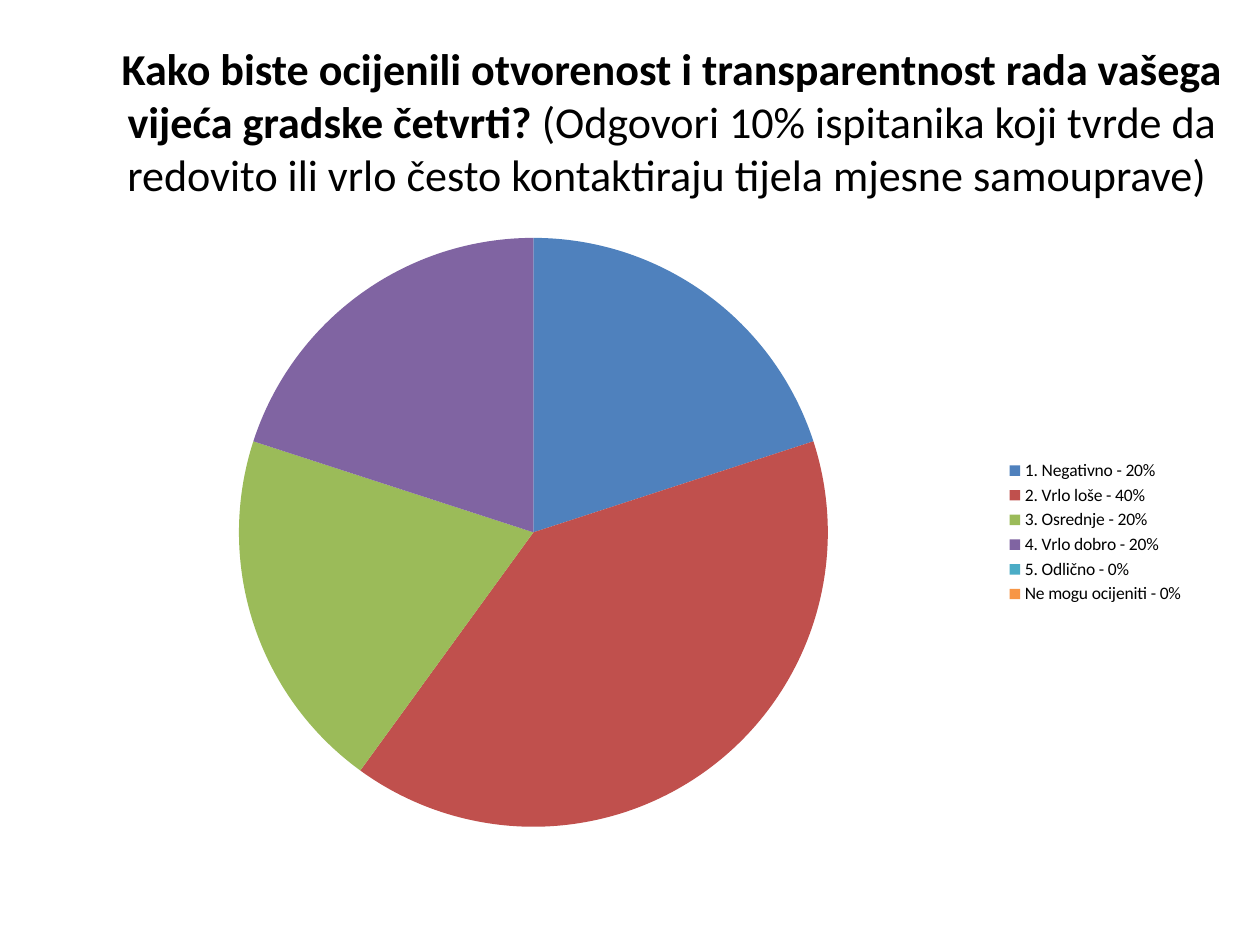
from pptx import Presentation
from pptx.chart.data import CategoryChartData
from pptx.dml.color import RGBColor
from pptx.enum.chart import XL_CHART_TYPE, XL_LEGEND_POSITION
from pptx.enum.text import MSO_ANCHOR, PP_ALIGN
from pptx.util import Pt

PIE = XL_CHART_TYPE.PIE
RIGHT = XL_LEGEND_POSITION.RIGHT
MIDDLE = MSO_ANCHOR.MIDDLE
CENTER = PP_ALIGN.CENTER


def paint(color, code):
    color.rgb = RGBColor.from_string(code)


deck = Presentation()
deck.slide_width, deck.slide_height = Pt(720), Pt(540)
slide = deck.slides.add_slide(deck.slide_layouts[6])

title = slide.shapes.add_textbox(Pt(60), Pt(24), Pt(648), Pt(90))
frame = title.text_frame
for name, value in {"word_wrap": True, "vertical_anchor": MIDDLE}.items():
    setattr(frame, name, value)
para = frame.paragraphs[0]
para.alignment = CENTER
parts = [
    ("Kako biste ocijenili otvorenost i transparentnost rada vašega vijeća gradske četvrti?", True),
    (" (Odgovori 10% ispitanika koji tvrde da redovito ili vrlo često kontaktiraju tijela mjesne samouprave) ", False),
]
for text, bold in parts:
    run = para.add_run()
    run.text = text
    for name, value in {"name": "Calibri", "size": Pt(25.2), "bold": bold}.items():
        setattr(run.font, name, value)
    paint(run.font.color, "000000")

slices = [
    ("1. Negativno - 20%", 20, "4F81BD"),
    ("2. Vrlo loše - 40%", 40, "C0504D"),
    ("3. Osrednje - 20%", 20, "9BBB59"),
    ("4. Vrlo dobro - 20%", 20, "8064A2"),
    ("5. Odlično - 0%", 0, "4BACC6"),
    ("Ne mogu ocijeniti - 0%", 0, "F79646"),
]
labels, values, colors = zip(*slices)
data = CategoryChartData()
data.categories = labels
data.add_series("Series 1", values)
chart = slide.shapes.add_chart(PIE, Pt(36), Pt(126), Pt(648), Pt(356.4), data).chart
for name, value in {"has_title": False, "has_legend": True}.items():
    setattr(chart, name, value)
for name, value in {"position": RIGHT, "include_in_layout": False}.items():
    setattr(chart.legend, name, value)
for name, value in {"name": "Calibri", "size": Pt(10)}.items():
    setattr(chart.font, name, value)
paint(chart.font.color, "000000")

plot = chart.plots[0]
plot.vary_by_categories = True
for index, code in enumerate(colors):
    fill = plot.series[0].points[index].format.fill
    fill.solid()
    paint(fill.fore_color, code)

deck.save("out.pptx")
